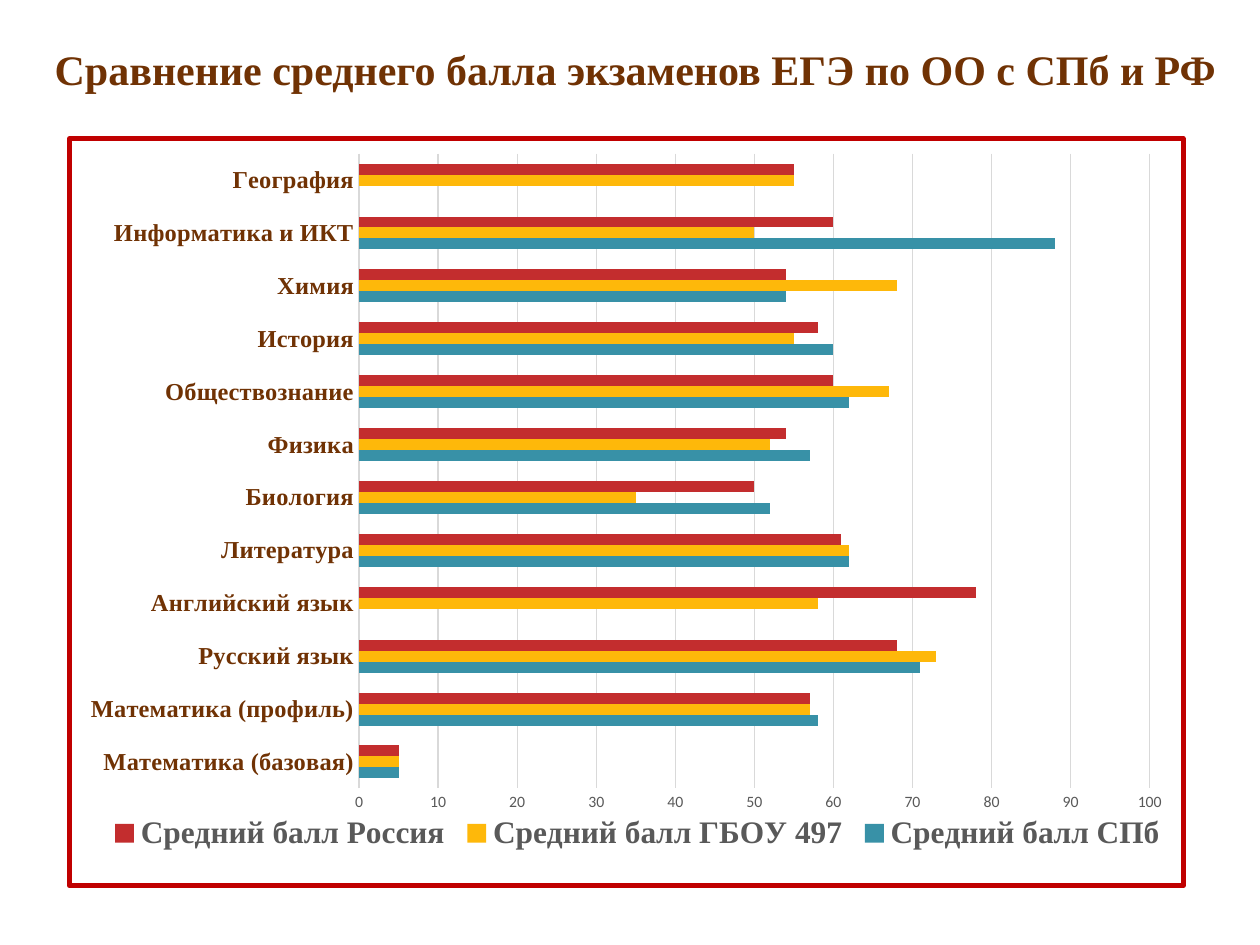
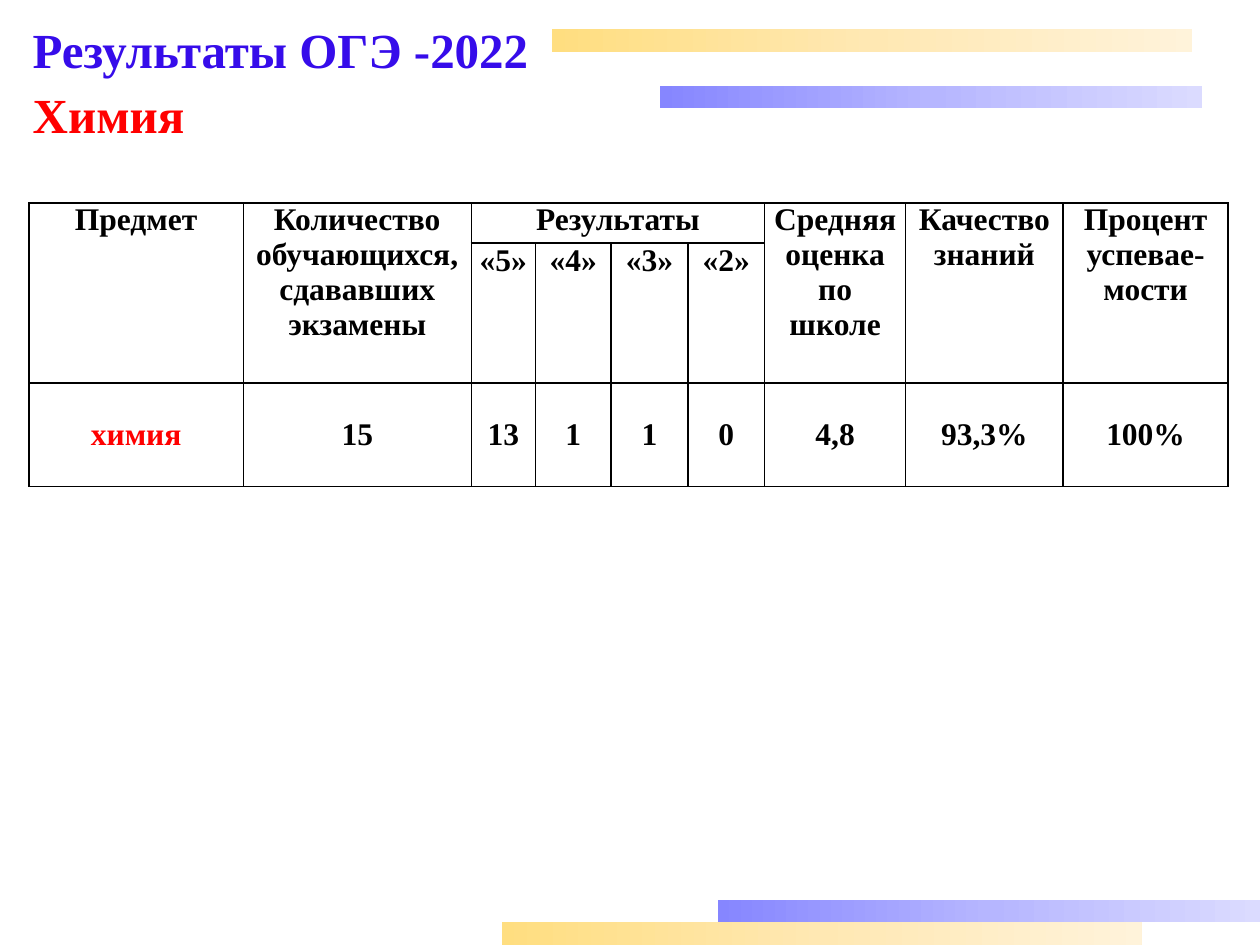
from lxml import etree
from pptx import Presentation
from pptx import util as u
from pptx.chart import data as chart_data
from pptx.dml import color as dml_color
from pptx.enum import chart as charts, shapes, text
from pptx.oxml import ns, parse_xml

SERIF, SANS = "Times New Roman", "Calibri"
BROWN, RED, BLACK, GREY, RULE = "703204", "FF0000", "000000", "595959", "D9D9D9"
BLUE_BAND = (309.6, ("8686FF", "B6B6FF", "DBDBFF"))
YELLOW_BAND = (365.8, ("FFDE80", "FFE8B3", "FFF3DA"))
BAND_HEIGHT = 13

SUBJECTS = ["Математика (базовая)", "Математика (профиль)", "Русский язык",
            "Английский язык", "Литература", "Биология", "Физика",
            "Обществознание", "История", "Химия", "Информатика и ИКТ", "География"]
SCORES = [
    ("Средний балл СПб", "3891A7", [5, 58, 71, None, 62, 52, 57, 62, 60, 54, 88, None]),
    ("Средний балл ГБОУ 497", "FEB80A", [5, 57, 73, 58, 62, 35, 52, 67, 55, 68, 50, 55]),
    ("Средний балл Россия", "C32D2E", [5, 57, 68, 78, 61, 50, 54, 60, 58, 54, 60, 55]),
]
COLUMN_WIDTHS = [122.4, 130.3, 36.7, 43.2, 43.9, 43.9, 80.6, 90, 94.3]
ROW_HEIGHTS = [23, 80, 59]
RESULT_ROWS = [
    ["Предмет", "Количество\nобучающихся, сдававших экзамены", "Результаты", "", "", "",
     "Средняя\nоценка по школе", "Качество знаний", "Процент\nуспевае-мости"],
    ["", "", "«5»", "«4»", "«3»", "«2»", "", "", ""],
    ["химия", "15", "13", "1", "1", "0", "4,8", "93,3%", "100%"],
]
RESULT_MERGES = [(0, 2, 0, 5)] + [(0, column, 1, column) for column in (0, 1, 6, 7, 8)]


def rgb(value):
    return dml_color.RGBColor.from_string(value)


def set_font(font, size, color, name=SERIF, bold=True):
    font.size, font.name, font.bold = u.Pt(size), name, bold
    font.color.rgb = rgb(color)


def line_xml(tag, color, width):
    return parse_xml(f'<a:{tag} {ns.nsdecls("a")} w="{u.Pt(width)}"><a:solidFill>'
                     f'<a:srgbClr val="{color}"/></a:solidFill></a:{tag}>')


def place(element, index, left, top, width, height, inner=False):
    for layout in element.findall(ns.qn("c:layout")):
        element.remove(layout)
    layout = parse_xml(f'<c:layout {ns.nsdecls("c")}><c:manualLayout/></c:layout>')
    settings = [("layoutTarget", "inner")] if inner else []
    settings += [("xMode", "edge"), ("yMode", "edge"),
                 ("x", left), ("y", top), ("w", width), ("h", height)]
    for tag, value in settings:
        etree.SubElement(layout[0], ns.qn(f"c:{tag}")).set("val", str(value))
    element.insert(index, layout)


class Deck:
    """Holds the shared style and the slide being built."""

    def __init__(self):
        self.presentation = Presentation()
        self.presentation.slide_width = u.Pt(720)
        self.presentation.slide_height = u.Pt(540)
        self.slide = None

    def add_slide(self):
        self.slide = self.presentation.slides.add_slide(self.presentation.slide_layouts[5])

    def add_text(self, paragraph, words, size, color):
        run = paragraph.add_run()
        run.text = words
        set_font(run.font, size, color)

    def title(self, lines, box, size, align, anchor, spacing=1.0):
        shape = self.slide.shapes.title
        shape.left, shape.top, shape.width, shape.height = map(u.Pt, box)
        frame = shape.text_frame
        frame.word_wrap = True
        frame.auto_size = text.MSO_AUTO_SIZE.NONE
        frame.vertical_anchor = anchor
        for index, (words, color) in enumerate(lines):
            paragraph = frame.add_paragraph() if index else frame.paragraphs[0]
            paragraph.alignment = align
            paragraph.line_spacing = spacing
            paragraph.space_before = u.Pt(7 if index else 0)
            self.add_text(paragraph, words, size, color)

    def band(self, style, left, top):
        width, colors = style
        shape = self.slide.shapes.add_shape(
            shapes.MSO_SHAPE.RECTANGLE, u.Pt(left), u.Pt(top), u.Pt(width), u.Pt(BAND_HEIGHT))
        shape.shadow.inherit = False
        shape.line.fill.background()
        stops = "".join(f'<a:gs pos="{index * 50000}"><a:srgbClr val="{color}"/></a:gs>'
                        for index, color in enumerate(colors))
        shape.element.spPr.find(ns.qn("a:prstGeom")).addnext(parse_xml(
            f'<a:gradFill {ns.nsdecls("a")} rotWithShape="1"><a:gsLst>{stops}</a:gsLst>'
            '<a:lin ang="0" scaled="1"/></a:gradFill>'))

    def bar_chart(self, categories, series, box):
        data = chart_data.CategoryChartData()
        data.categories = categories
        for name, _, values in series:
            data.add_series(name, values)
        chart = self.slide.shapes.add_chart(
            charts.XL_CHART_TYPE.BAR_CLUSTERED, *map(u.Pt, box), data).chart
        set_font(chart.font, 10, BLACK, SANS, False)
        chart.has_title = False
        plot = chart.plots[0]
        plot.gap_width, plot.overlap, plot.vary_by_categories = 182, 0, False
        for bars, (_, color, _) in zip(plot.series, series):
            bars.format.fill.solid()
            bars.format.fill.fore_color.rgb = rgb(color)

        category_axis, value_axis = chart.category_axis, chart.value_axis
        for axis in (category_axis, value_axis):
            axis.major_tick_mark = axis.minor_tick_mark = charts.XL_TICK_MARK.NONE
        set_font(category_axis.tick_labels.font, 14, BROWN)
        set_font(value_axis.tick_labels.font, 9, GREY, SANS, False)
        value_axis.minimum_scale, value_axis.maximum_scale = 0, 100
        value_axis.major_unit = 10
        value_axis.has_major_gridlines = True
        value_axis.format.line.fill.background()
        for line in (category_axis.format.line, value_axis.major_gridlines.format.line):
            line.color.rgb = rgb(RULE)
            line.width = u.Pt(0.75)

        chart.has_legend = True
        chart.legend.position = charts.XL_LEGEND_POSITION.BOTTOM
        chart.legend.include_in_layout = False
        set_font(chart.legend.font, 18, GREY)
        chart_part = chart.element.find(ns.qn("c:chart"))
        place(chart_part.find(ns.qn("c:plotArea")), 0, 0.26, 0.02, 0.71, 0.85, True)
        place(chart_part.find(ns.qn("c:legend")), 1, 0.03, 0.9, 0.96, 0.06)
        border = parse_xml(f'<c:spPr {ns.nsdecls("c", "a")}><a:noFill/></c:spPr>')
        border.append(line_xml("ln", "C00000", 3))
        chart_part.addnext(border)

    def table(self, rows, merges, left, top):
        frame = self.slide.shapes.add_table(
            len(rows), len(COLUMN_WIDTHS), u.Pt(left), u.Pt(top),
            u.Pt(sum(COLUMN_WIDTHS)), u.Pt(sum(ROW_HEIGHTS)))
        table = frame.table
        table.first_row = table.horz_banding = False
        for column, width in zip(table.columns, COLUMN_WIDTHS):
            column.width = u.Pt(width)
        for row, height in zip(table.rows, ROW_HEIGHTS):
            row.height = u.Pt(height)
        for row_index, row in enumerate(rows):
            for column_index, words in enumerate(row):
                is_result = row_index == len(rows) - 1
                color = RED if is_result and column_index == 0 else BLACK
                self.fill_cell(table.cell(row_index, column_index), words, color, is_result)
        for first_row, first_column, last_row, last_column in merges:
            table.cell(first_row, first_column).merge(table.cell(last_row, last_column))
        for properties in frame.element.iter(ns.qn("a:tcPr")):
            for index, tag in enumerate(("lnL", "lnR", "lnT", "lnB")):
                properties.insert(index, line_xml(tag, BLACK, 1))

    def fill_cell(self, cell, words, color, is_result):
        cell.fill.background()
        cell.margin_left = cell.margin_right = u.Pt(3.6)
        cell.margin_top = cell.margin_bottom = u.Pt(0)
        cell.vertical_anchor = text.MSO_ANCHOR.MIDDLE if is_result else text.MSO_ANCHOR.TOP
        if not words:
            return
        for index, line in enumerate(words.split("\n")):
            paragraph = cell.text_frame.add_paragraph() if index else cell.text_frame.paragraphs[0]
            paragraph.alignment = text.PP_ALIGN.CENTER
            self.add_text(paragraph, line, 18, color)


def main():
    deck = Deck()

    deck.add_slide()
    deck.title([("Сравнение среднего балла экзаменов ЕГЭ по ОО с СПб и РФ", BROWN)],
               (20, 21, 686, 36), 24, text.PP_ALIGN.CENTER, text.MSO_ANCHOR.MIDDLE)
    deck.bar_chart(SUBJECTS, SCORES, (38.2, 77.8, 639.4, 429.8))

    deck.add_slide()
    deck.band(BLUE_BAND, 377.3, 49)
    deck.band(YELLOW_BAND, 315.4, 16.6)
    deck.title([("Результаты ОГЭ -2022", "360CEA"), ("Химия", RED)],
               (11.5, 11.5, 311, 33.8), 28, text.PP_ALIGN.LEFT, text.MSO_ANCHOR.TOP, 0.9)
    deck.band(BLUE_BAND, 410.4, 514)
    deck.band(YELLOW_BAND, 286.6, 527)
    deck.table(RESULT_ROWS, RESULT_MERGES, 16.6, 115.9)

    deck.presentation.save("out.pptx")


if __name__ == "__main__":
    main()
